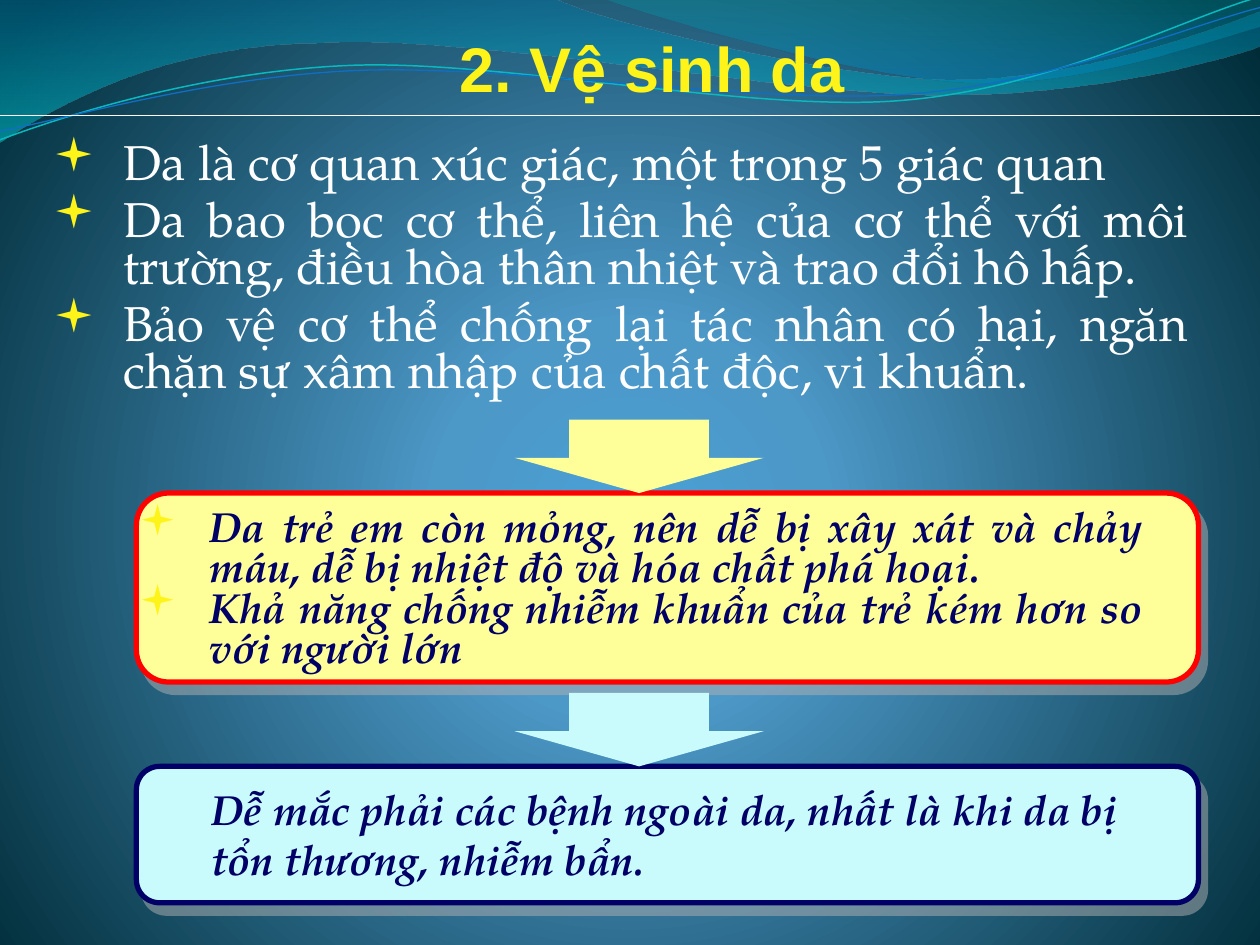
"""Build the skin hygiene slide: three facts leading through two arrows to boxed conclusions."""
from lxml import etree
from pptx import Presentation
from pptx import util as u
from pptx.dml.color import RGBColor
from pptx.enum import shapes, text
from pptx.oxml.ns import nsdecls, qn

SERIF = "TeX Gyre Pagella"
YELLOW, NAVY, WHITE = "FFF419", "000066", "FFFFFF"
TITLE = "2. Vệ sinh da"
FACTS = [
    "Da là cơ quan xúc giác, một trong 5 giác quan",
    "Da bao bọc cơ thể, liên hệ của cơ thể với môi trường, điều hòa thân nhiệt và trao đổi hô hấp.",
    "Bảo vệ cơ thể chống lại tác nhân có hại, ngăn chặn sự xâm nhập của chất độc, vi khuẩn.",
]
RISKS = [
    "Da trẻ em còn mỏng, nên dễ bị xây xát và chảy máu, dễ bị nhiệt độ và hóa chất phá hoại.",
    "Khả năng chống nhiễm khuẩn của trẻ kém hơn so với người lớn",
]
OUTCOME = ["Dễ mắc phải các bệnh ngoài da, nhất là khi da bị tổn thương, nhiễm bẩn."]

GLOW = [(0, "4AA0D6", 100), (25, "4C98C7", 100), (100, "002C38", 100)]
GLOW_PATH = '<a:path path="circle"><a:fillToRect l="10000" t="110000" r="10000" b="100000"/></a:path>'
DOWNWARD = '<a:lin ang="5400000" scaled="1"/>'
BANDS = [
    ([(0, -0.01), (4.4, -0.01), (4.76, 0.17, 6.64, 0.63, 7.58, 0.63), (8.53, 0.63, 9.58, 0.26, 10, 0.09),
      (10.01, 0.36), (9.83, 0.44, 8.7, 0.76, 7.46, 0.75), (6.22, 0.75, 3.82, 0.28, 2.57, 0.34),
      (1.29, 0.35, 0.46, 0.83, -0.01, 1.13), (0, -0.01)], [(0, "0074A1", 45), (100, "00C6CF", 55)]),
    ([(4.79, -0.01), (5.09, 0.11, 6.82, 0.62, 7.69, 0.65), (8.56, 0.69, 9.61, 0.32, 10, 0.21), (10, 0),
      (4.79, -0.01)], [(0, "00A1A9", 30), (80, "008BBF", 45)]),
]
STRANDS = [
    ([(0, 1.11), (0.48, 0.93, 1.58, 0.57, 2.77, 0.52), (3.95, 0.47, 5.93, 0.89, 7.13, 0.8),
      (8.33, 0.71, 9.38, 0.15, 9.98, -0.02)], "0AB8BF", 0.85),
    ([(0, 1.04), (0.47, 0.96, 1.64, 0.61, 2.83, 0.56), (4.03, 0.51, 5.97, 0.83, 7.17, 0.75),
      (8.36, 0.67, 9.41, 0.21, 10, 0.06)], "0F6FC6", 0.75),
]
PANELS = [
    {"top": 9.94, "height": 3.81, "fill": "FFFF99", "line": "FF0000"},
    {"top": 15.45, "height": 2.75, "fill": "C9FAFC", "line": NAVY},
]
ARROW_HEIGHT = 1.48


def rgb(code):
    return RGBColor.from_string(code)


def add_xml(parent, xml):
    parent.append(etree.fromstring(xml.replace(" ", f" {nsdecls('a')} ", 1)))


def set_gradient(owner, fill, stops, direction):
    fill.gradient()
    gradient = owner.element.xpath(".//a:gradFill")[0]
    for child in list(gradient):
        gradient.remove(child)
    marks = "".join(
        f'<a:gs pos="{at * 1000}"><a:srgbClr val="{code}"><a:alpha val="{opacity * 1000}"/></a:srgbClr></a:gs>'
        for at, code, opacity in stops)
    add_xml(gradient, f'<a:gsLst xml:space="default">{marks}</a:gsLst>')
    add_xml(gradient, direction)


def add_wave(slide, outline, closed):
    points = [(step[i] * u.Cm(2.54), step[i + 1] * u.Cm(2.54)) for step in outline for i in range(0, len(step), 2)]
    builder = slide.shapes.build_freeform(*points[0])
    builder.add_line_segments(points[1:], close=closed)
    wave = builder.convert_to_shape()
    wave.shadow.inherit = False
    segments = iter(wave.element.xpath(".//a:lnTo"))
    for step in outline[1:]:
        segment = next(segments)
        if len(step) == 6:
            segment.tag = qn("a:cubicBezTo")
            for follower in (next(segments), next(segments)):
                segment.append(follower[0])
                follower.getparent().remove(follower)
    return wave


def add_text(slide, box, lines, size, color, font=SERIF, emphasis=False, bullet_size=None, before=0):
    textbox = slide.shapes.add_textbox(*map(u.Cm, box))
    frame = textbox.text_frame
    frame.word_wrap = True
    frame.text = "\n".join(lines)
    for paragraph in frame.paragraphs:
        if bullet_size:
            paragraph.alignment = text.PP_ALIGN.JUSTIFY
            paragraph.line_spacing = 0.8
            paragraph.space_before = u.Pt(before)
            properties = paragraph._p.get_or_add_pPr()
            properties.set("marL", str(u.Cm(1.42)))
            properties.set("indent", str(u.Cm(-1.42)))
            for xml in (f'<a:buClr xml:space="default"><a:srgbClr val="{YELLOW}"/></a:buClr>',
                        f'<a:buSzPct val="{bullet_size * 1000}"/>',
                        '<a:buFont typeface="Wingdings" pitchFamily="2" charset="2"/>',
                        '<a:buChar char="▪"/>'):
                add_xml(properties, xml)
        paragraph.font.name, paragraph.font.size = font, u.Pt(size)
        paragraph.font.color.rgb = rgb(color)
        if emphasis:
            paragraph.font.bold = paragraph.font.italic = True
    return frame


def add_block(slide, preset, box, fill, adjustments):
    block = slide.shapes.add_shape(preset, *map(u.Cm, box))
    block.shadow.inherit = False
    block.fill.solid()
    block.fill.fore_color.rgb = rgb(fill)
    block.line.fill.background()
    for i, value in enumerate(adjustments):
        block.adjustments[i] = value
    return block


def add_panel(slide, panel):
    block = add_block(slide, shapes.MSO_SHAPE.ROUNDED_RECTANGLE,
                      (2.75, panel["top"], 21.41, panel["height"]), panel["fill"], [0.17])
    block.line.color.rgb = rgb(panel["line"])
    block.line.width = u.Pt(3)
    add_xml(block.element.xpath(".//a:effectLst")[0],
            f'<a:outerShdw dist="{u.Pt(7.2)}" dir="{56 * 60000}" algn="ctr" rotWithShape="0">'
            '<a:srgbClr val="B2B2B2"><a:alpha val="50000"/></a:srgbClr></a:outerShdw>')


def main():
    deck = Presentation()
    deck.slide_width, deck.slide_height = u.Cm(25.4), u.Cm(19.05)
    slide = deck.slides.add_slide(deck.slide_layouts[6])
    set_gradient(slide, slide.background.fill, GLOW, GLOW_PATH)

    for outline, stops in BANDS:
        band = add_wave(slide, outline, True)
        set_gradient(band, band.fill, stops, DOWNWARD)
        band.line.fill.background()
    for outline, color, width in STRANDS:
        strand = add_wave(slide, outline, False)
        strand.fill.background()
        strand.line.color.rgb = rgb(color)
        strand.line.width = u.Pt(width)

    facts = add_text(slide, (1.07, 2.76, 23.06, 5.51), FACTS, 28, WHITE, bullet_size=95, before=5.6)
    facts.margin_left, facts.margin_right = u.Cm(0), u.Cm(0.18)

    rule = slide.shapes.add_connector(shapes.MSO_CONNECTOR.STRAIGHT, 0, u.Cm(2.33), deck.slide_width, u.Cm(2.33))
    rule.line.color.rgb = rgb(WHITE)
    rule.line.width = u.Pt(0.75)
    add_xml(rule.element.spPr, '<a:effectLst />')

    heading = add_text(slide, (9.02, 0.46, 8.36, 1.8), [TITLE], 36, YELLOW, "Arial")
    heading.word_wrap = False
    heading.vertical_anchor = text.MSO_ANCHOR.MIDDLE
    heading.paragraphs[0].font.bold = True

    for panel in PANELS:
        add_panel(slide, panel)
    add_text(slide, (2.55, 10.16, 20.74, 3.53), RISKS, 24, NAVY, emphasis=True, bullet_size=100)
    add_text(slide, (4.01, 15.67, 19.25, 2.31), OUTCOME, 24, NAVY, emphasis=True)
    for panel in PANELS:
        add_block(slide, shapes.MSO_SHAPE.DOWN_ARROW,
                  (10.37, panel["top"] - ARROW_HEIGHT, 5.03, ARROW_HEIGHT), panel["fill"], [0.56, 0.48])
    deck.save("out.pptx")


if __name__ == "__main__":
    main()
